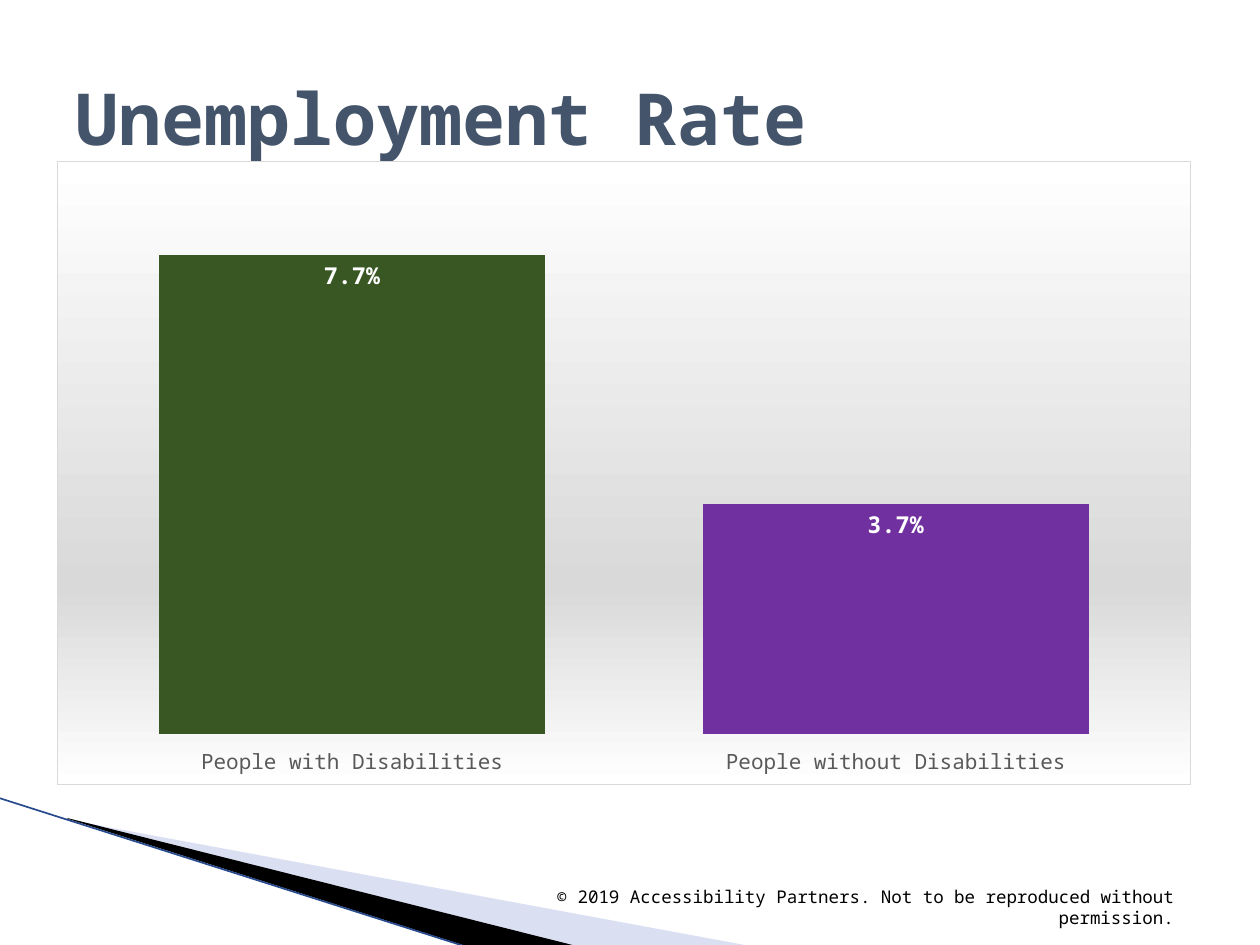
from lxml import etree
from pptx import Presentation
from pptx.chart.data import CategoryChartData
from pptx.dml.color import RGBColor
from pptx.enum.chart import XL_CHART_TYPE, XL_LABEL_POSITION, XL_TICK_LABEL_POSITION, XL_TICK_MARK
from pptx.enum.shapes import MSO_CONNECTOR
from pptx.enum.text import MSO_ANCHOR, PP_ALIGN
from pptx.oxml import parse_xml
from pptx.oxml.ns import nsdecls, qn
from pptx.util import Pt

PX = 914400 / 126
FONT = "Noto Sans Mono"
SLATE = RGBColor(0x44, 0x54, 0x6A)
BLACK = RGBColor(0, 0, 0)
WHITE = RGBColor(255, 255, 255)
GRAY = RGBColor(0x59, 0x59, 0x59)
PALE_BLUE = RGBColor(0xA4, 0xB3, 0xDF)
EDGE_BLUE = RGBColor(0x26, 0x4A, 0x8C)
GREEN = RGBColor(0x38, 0x57, 0x23)
PURPLE = RGBColor(0x70, 0x30, 0xA0)


def px(*lengths):
    return [round(length * PX) for length in lengths]


def add_text(text, box, size, color, bold=False, align=PP_ALIGN.LEFT, anchor=MSO_ANCHOR.MIDDLE):
    frame = slide.shapes.add_textbox(*px(*box)).text_frame
    frame.word_wrap = True
    frame.vertical_anchor = anchor
    paragraph = frame.paragraphs[0]
    paragraph.text = text
    paragraph.alignment = align
    font = paragraph.font
    font.name, font.size, font.bold = FONT, Pt(size), bold
    font.color.rgb = color


deck = Presentation()
deck.slide_width, deck.slide_height = px(1260, 945)
slide = deck.slides.add_slide(deck.slide_layouts[6])

# Corner wedges: color, opacity in percent, outline
wedges = [
    (PALE_BLUE, 40, [(69, 820), (750, 946), (575, 946), (69, 819)]),
    (BLACK, 100, [(67, 818), (576, 946), (469, 947), (68, 819)]),
]
for color, opacity, (start, *corners) in wedges:
    outline = slide.shapes.build_freeform(*start, scale=PX)
    outline.add_line_segments(corners)
    wedge = outline.convert_to_shape()
    wedge.shadow.inherit = False
    wedge.fill.solid()
    wedge.fill.fore_color.rgb = color
    wedge.line.fill.background()
    if opacity < 100:
        tint = wedge.fill._xPr.find(qn("a:solidFill"))[0]
        etree.SubElement(tint, qn("a:alpha")).set("val", str(opacity * 1000))

# Corner edge line
edge = slide.shapes.add_connector(MSO_CONNECTOR.STRAIGHT, *px(-1, 798, 467, 947))
edge.line.color.rgb = EDGE_BLUE
edge.line.width = Pt(0.95)
etree.SubElement(edge._element.spPr, qn("a:effectLst"))

# Title
add_text("Unemployment Rate", (63, 38, 1134, 158), 41, SLATE, bold=True)

# Unemployment chart
rates = CategoryChartData(number_format="0.0%")
rates.categories = ["People with Disabilities", "People without Disabilities"]
rates.add_series("Series 1", (0.077, 0.037))
chart = slide.shapes.add_chart(
    XL_CHART_TYPE.COLUMN_CLUSTERED, *px(57, 161, 1134, 624), rates).chart
chart.has_legend = False
chart.has_title = False
chart.font.name, chart.font.size = FONT, Pt(10)
chart.font.color.rgb = BLACK

groups = chart.category_axis
groups.major_tick_mark = XL_TICK_MARK.NONE
groups.tick_label_position = XL_TICK_LABEL_POSITION.LOW
groups.format.line.fill.background()
groups.tick_labels.font.name = FONT
groups.tick_labels.font.size = Pt(12)
groups.tick_labels.font.color.rgb = GRAY

percent = chart.value_axis
percent.visible = False
percent.has_major_gridlines = False
percent.minimum_scale, percent.maximum_scale = 0, 0.09
percent.tick_labels.number_format = "0.0%"
percent.tick_labels.number_format_is_linked = False

columns = chart.plots[0]
columns.gap_width = 41
columns.vary_by_categories = False
for index, color in enumerate((GREEN, PURPLE)):
    column = columns.series[0].points[index].format
    column.fill.solid()
    column.fill.fore_color.rgb = color
    column.line.fill.background()

labels = columns.series[0].data_labels
labels.show_value = True
labels.position = XL_LABEL_POSITION.INSIDE_END
labels.number_format = "0.0%"
labels.number_format_is_linked = False
labels.font.name, labels.font.size, labels.font.bold = FONT, Pt(13.3), True
labels.font.color.rgb = WHITE

# Chart background gradient and border
stops = "".join(
    f'<a:gs pos="{position * 1000}"><a:srgbClr val="{shade}"/></a:gs>'
    for position, shade in ((0, "FFFFFF"), (68, "D9D9D9"), (100, "FFFFFF")))
chart_root = chart._chartSpace
chart_root.find(qn("c:chart")).addnext(parse_xml(
    f'<c:spPr {nsdecls("c", "a")}><a:gradFill><a:gsLst>{stops}</a:gsLst>'
    '<a:lin ang="5400000" scaled="0"/></a:gradFill><a:ln w="9525"><a:solidFill>'
    '<a:srgbClr val="D9D9D9"/></a:solidFill></a:ln></c:spPr>'))

# Plot area position, as fractions of the chart
plot_area = chart_root.find(".//" + qn("c:plotArea"))
for old_layout in plot_area.findall(qn("c:layout")):
    plot_area.remove(old_layout)
fractions = "".join(
    f'<c:{side} val="{value}"/>'
    for side, value in (("x", 0.02), ("y", 0.02), ("w", 0.96), ("h", 0.9)))
plot_area.insert(0, parse_xml(
    f'<c:layout {nsdecls("c")}><c:manualLayout><c:layoutTarget val="inner"/>'
    f'<c:xMode val="edge"/><c:yMode val="edge"/>{fractions}</c:manualLayout></c:layout>'))

# Copyright line
add_text("© 2019 Accessibility Partners. Not to be reproduced without permission.",
         (451, 883, 735, 51), 10, BLACK, align=PP_ALIGN.RIGHT, anchor=MSO_ANCHOR.BOTTOM)

deck.save("out.pptx")
